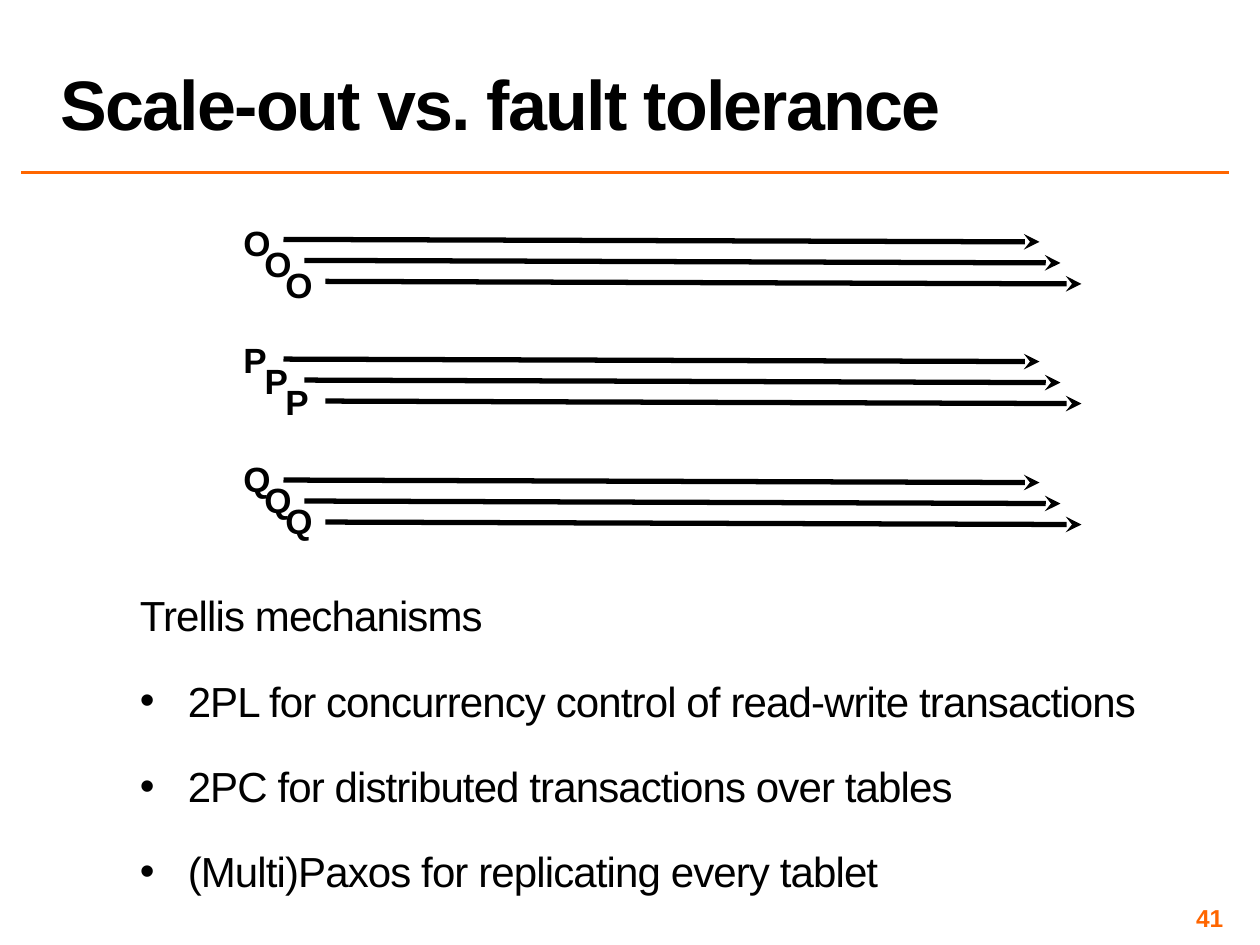
from pptx import Presentation
from pptx.dml.color import RGBColor
from pptx.enum.shapes import MSO_CONNECTOR as Conn
from pptx.enum.text import MSO_ANCHOR as Anchor, MSO_AUTO_SIZE as AutoSize, PP_ALIGN as Align
from pptx.oxml.ns import qn
from pptx.util import Inches, Pt
from lxml.etree import SubElement

BLACK, ORANGE = "000000", "FF6600"


def write(paragraph, text, size, color=BLACK, bold=False, spacing=0, **layout):
    run = paragraph.add_run()
    run.text = text
    font_format = {"name": "Arial", "size": Pt(size), "bold": bold}
    for key, value in font_format.items():
        setattr(run.font, key, value)
    run.font.color.rgb = RGBColor.from_string(color)
    if spacing:
        run.font._element.set("spc", str(int(spacing * 100)))
    for key, value in layout.items():
        setattr(paragraph, key, value)


def draw_line(x1, y1, x2, y2, color, width, arrow=False):
    ends = [Inches(v) for v in (x1, y1, x2, y2)]
    line = slide.shapes.add_connector(Conn.STRAIGHT, *ends)
    line.line.color.rgb = RGBColor.from_string(color)
    line.line.width = Pt(width)
    if arrow:
        SubElement(line.line._get_or_add_ln(), qn("a:tailEnd"), type="stealth")
    SubElement(line._element.spPr, qn("a:effectLst"))


prs = Presentation()
prs.slide_width, prs.slide_height = Inches(10), Inches(7.5)
slide = prs.slides.add_slide(prs.slide_layouts[5])

draw_line(0.17, 1.37, 9.75, 1.37, ORANGE, 2)

title = slide.shapes.title
title_box = {"left": 0.38, "top": 0.02, "width": 9.37, "height": 1.17}
for key, value in title_box.items():
    setattr(title, key, Inches(value))
title_frame = title.text_frame
title_format = {"vertical_anchor": Anchor.BOTTOM, "auto_size": AutoSize.NONE, "word_wrap": True}
for key, value in title_format.items():
    setattr(title_frame, key, value)
write(title_frame.paragraphs[0], "Scale-out vs. fault tolerance", 40, bold=True,
      spacing=-1, alignment=Align.LEFT, line_spacing=0.8)

partitions = [("O", 0.42, 1.71, 1.9), ("P", 0.39, 2.64, 2.85), ("Q", 0.42, 3.58, 3.81)]
for partition, label_width, label_top, arrow_top in partitions:
    for replica in range(3):
        shift = replica / 6
        draw_line(2.25 + shift, arrow_top + shift, 8.25 + shift, arrow_top + shift + 0.02,
                  BLACK, 3, arrow=True)
        label = slide.shapes.add_textbox(Inches(1.83 + shift), Inches(label_top + shift),
                                         Inches(label_width), Inches(0.44)).text_frame
        label.word_wrap = False
        label.auto_size = AutoSize.SHAPE_TO_FIT_TEXT
        write(label.paragraphs[0], partition, 20, bold=True, alignment=Align.CENTER)

mechanisms = slide.shapes.add_textbox(Inches(1.07), Inches(4.64), Inches(8.49), Inches(2.7)).text_frame
page_number = slide.shapes.add_textbox(Inches(7.42), Inches(7.17), Inches(2.33), Inches(0.23)).text_frame
for frame in (mechanisms, page_number):
    frame.word_wrap = True
    for side in ("left", "top", "right", "bottom"):
        setattr(frame, f"margin_{side}", Inches(0.04))

mechanism_lines = [
    "Trellis mechanisms",
    "2PL for concurrency control of read-write transactions",
    "2PC for distributed transactions over tables",
    "(Multi)Paxos for replicating every tablet",
]
for index, text in enumerate(mechanism_lines):
    paragraph = mechanisms.add_paragraph() if index else mechanisms.paragraphs[0]
    write(paragraph, text, 24, spacing=-0.5, space_before=Pt(12), space_after=Pt(8))
    if index:
        properties = paragraph._p.get_or_add_pPr()
        properties.set("marL", str(Inches(0.38)))
        properties.set("indent", str(Inches(-0.38)))
        SubElement(properties, qn("a:buFont"), typeface="Arial")
        SubElement(properties, qn("a:buChar"), char="•")

page_number.vertical_anchor = Anchor.MIDDLE
write(page_number.paragraphs[0], "41", 14, ORANGE, bold=True, alignment=Align.RIGHT)

prs.save("out.pptx")
